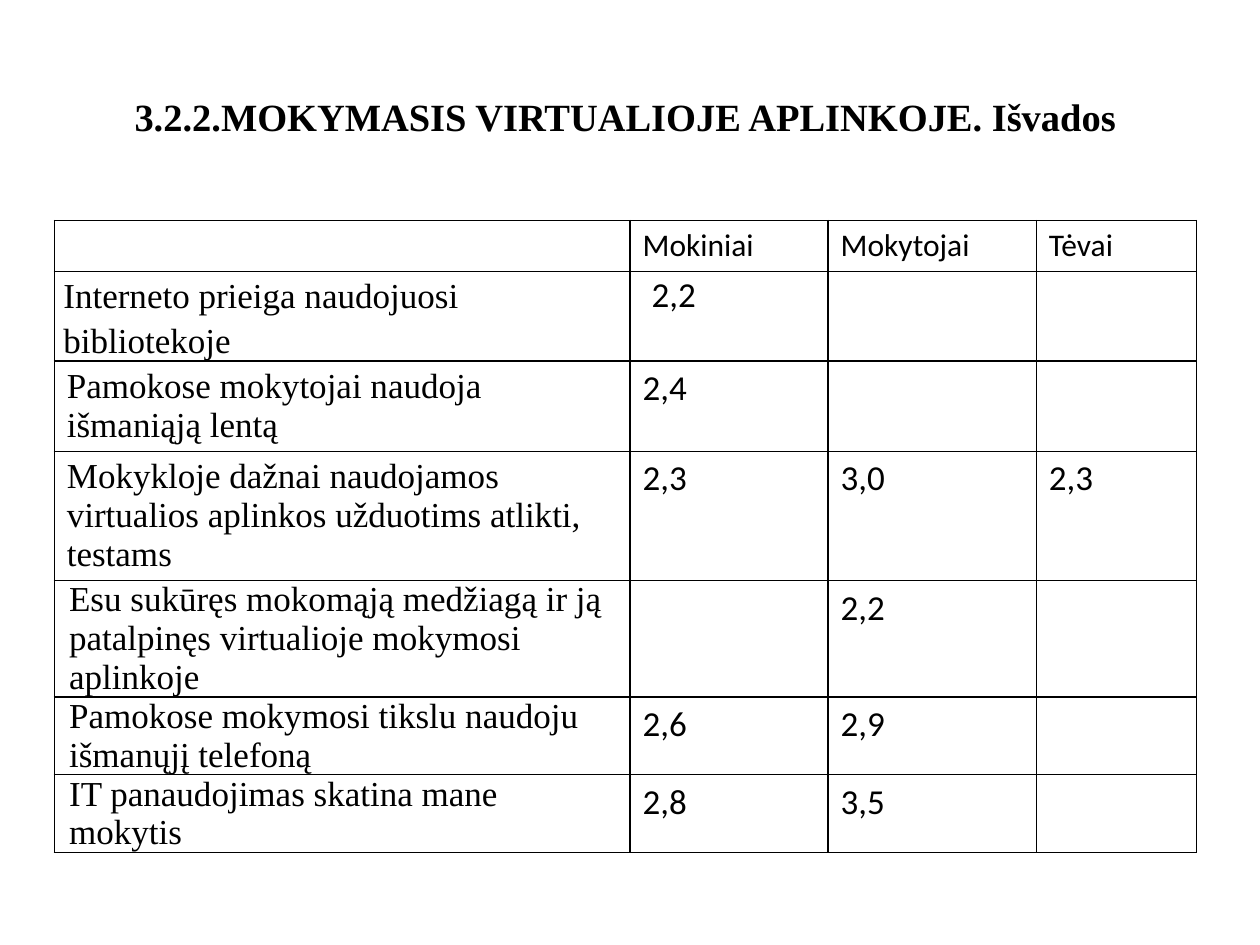
from lxml import etree
from pptx import Presentation
from pptx import util as u
from pptx.dml import color
from pptx.enum import text
from pptx.oxml import ns

HUES = {"ink": "000000", "paper": "FFFFFF"}
SERIF, SANS = "Times New Roman", "Calibri"

HEAD = ["", "Mokiniai", "Mokytojai", "Tėvai"]
ROWS = [
    ["Interneto prieiga naudojuosi bibliotekoje", "2,2", "", ""],
    ["Pamokose mokytojai naudoja išmaniąją lentą", "2,4", "", ""],
    ["Mokykloje dažnai naudojamos virtualios aplinkos užduotims atlikti, testams",
     "2,3", "3,0", "2,3"],
    ["Esu sukūręs mokomąją medžiagą ir ją patalpinęs virtualioje mokymosi aplinkoje",
     "", "2,2", ""],
    ["Pamokose mokymosi tikslu naudoju išmanųjį telefoną", "2,6", "2,9", ""],
    ["IT panaudojimas skatina mane mokytis", "2,8", "3,5", ""],
]
WIDTHS = [329, 113.2, 119, 91.6]
TIGHT = {(1, 0): 5.2, (1, 1): 5.2, (4, 0): 8.5, (5, 0): 8.5, (6, 0): 8.5}
EXTRA = {(1, 0): {"space": 1.15}, (1, 1): {"space": 1.07, "indent": 7.2}}


def write(frame, words, font=SANS, size=20, bold=False, align=None,
          space=None, indent=0):
    par = frame.paragraphs[0]
    par.alignment = align
    par.line_spacing = space
    if indent:
        props = par._p.get_or_add_pPr()
        props.set("marL", str(u.Pt(indent)))
        props.set("indent", "0")
    run = par.add_run()
    run.text = words
    run.font.name = font
    run.font.size = u.Pt(size)
    run.font.bold = bold
    run.font.color.rgb = color.RGBColor.from_string(HUES["ink"])


class Deck:
    def __init__(self):
        self.show = Presentation()
        self.show.slide_width = u.Pt(720)
        self.show.slide_height = u.Pt(540)
        self.page = self.show.slides.add_slide(self.show.slide_layouts[5])
        back = self.page.background.fill
        back.solid()
        back.fore_color.rgb = color.RGBColor.from_string(HUES["paper"])

    def title(self, words, left, top, width, height):
        box = self.page.shapes.title
        box.left, box.top = u.Pt(left), u.Pt(top)
        box.width, box.height = u.Pt(width), u.Pt(height)
        box.text_frame.vertical_anchor = text.MSO_ANCHOR.MIDDLE
        write(box.text_frame, words, font=SERIF, size=22, bold=True,
              align=text.PP_ALIGN.CENTER)

    def edge(self, cell):
        props = cell._tc.get_or_add_tcPr()
        for spot, side in enumerate(("lnL", "lnR", "lnT", "lnB")):
            line = etree.Element(ns.qn("a:" + side), w=str(u.Pt(1)))
            fill = etree.SubElement(line, ns.qn("a:solidFill"))
            etree.SubElement(fill, ns.qn("a:srgbClr"), val=HUES["ink"])
            props.insert(spot, line)

    def table(self, rows, left, top, height, step):
        frame = self.page.shapes.add_table(
            len(rows), len(WIDTHS), u.Pt(left), u.Pt(top),
            u.Pt(sum(WIDTHS)), u.Pt(height))
        grid = frame.table
        grid.first_row = grid.horz_banding = False
        for col, width in zip(grid.columns, WIDTHS):
            col.width = u.Pt(width)
        for r, row in enumerate(rows):
            grid.rows[r].height = u.Pt(step)
            for c, words in enumerate(row):
                cell = grid.cell(r, c)
                cell.fill.background()
                self.edge(cell)
                if (r, c) in TIGHT:
                    cell.margin_left = cell.margin_right = u.Pt(TIGHT[r, c])
                    cell.margin_top = cell.margin_bottom = 0
                if words:
                    write(cell.text_frame, words, font=SANS if c else SERIF,
                          size=20 if r else 18, **EXTRA.get((r, c), {}))
        frame.height = u.Pt(height)


def main():
    deck = Deck()
    deck.title("3.2.2.MOKYMASIS VIRTUALIOJE APLINKOJE. Išvados ", 36, 21.6, 648, 90)
    deck.table([HEAD] + ROWS, 31, 126, 386.6, 29.2)
    deck.show.save("out.pptx")


if __name__ == "__main__":
    main()
